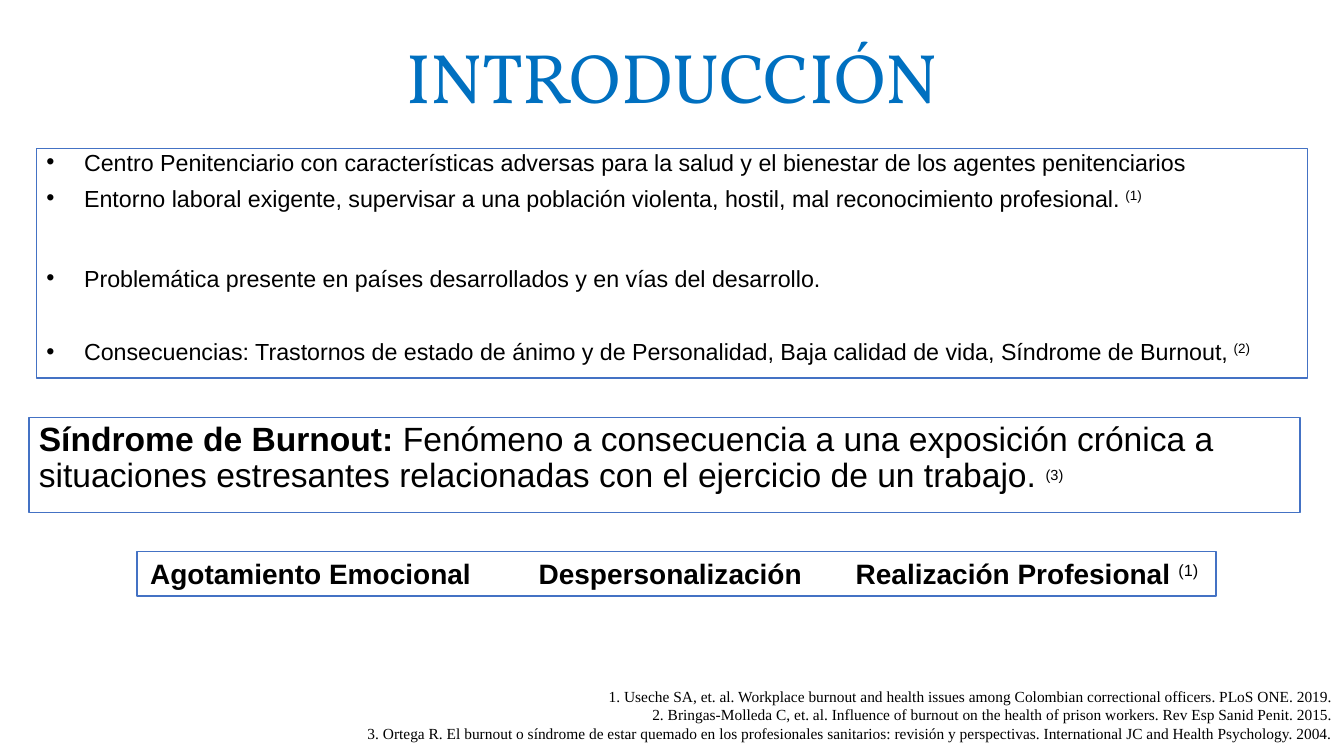
"""Builds the introduction slide on burnout among prison officers."""
from lxml.etree import SubElement
from pptx import Presentation
from pptx.dml.color import RGBColor
from pptx.enum.shapes import MSO_SHAPE as Preset
from pptx.enum.text import MSO_ANCHOR as Anchor, PP_ALIGN as Align
from pptx.oxml.ns import qn
from pptx.util import Pt

COLORS = {"title": "0070C0", "border": "4472C4", "paper": "FFFFFF", "ink": "000000"}


class SlideWriter:
    def __init__(self, slide):
        self.slide = slide

    def color(self, name):
        return RGBColor.from_string(COLORS[name])

    def text(self, at, anchor=Anchor.TOP):
        return self.prepare(self.slide.shapes.add_textbox(*map(Pt, at)), anchor)

    def panel(self, at):
        box = self.slide.shapes.add_shape(Preset.RECTANGLE, *map(Pt, at))
        box.shadow.inherit = False
        box.fill.solid()
        box.fill.fore_color.rgb = self.color("paper")
        box.line.color.rgb = self.color("border")
        box.line.width = Pt(1)
        return self.prepare(box, Anchor.TOP)

    def prepare(self, box, anchor):
        frame = box.text_frame
        frame.word_wrap = True
        frame.vertical_anchor = anchor
        return frame

    def paragraph(self, frame, first, align=Align.LEFT, spacing=1.0, before=0):
        line = frame.paragraphs[0] if first else frame.add_paragraph()
        line.alignment = align
        line.line_spacing = spacing
        line.space_before = Pt(before)
        return line

    def bullet(self, line, indent):
        props = line._p.get_or_add_pPr()
        props.set("marL", str(Pt(indent)))
        props.set("indent", str(-Pt(indent)))
        SubElement(props, qn("a:buFont"), typeface="Arial")
        SubElement(props, qn("a:buChar"), char="•")

    def tabs(self, line, stops):
        tab_list = SubElement(line._p.get_or_add_pPr(), qn("a:tabLst"))
        for stop in stops:
            SubElement(tab_list, qn("a:tab"), pos=str(Pt(stop)), algn="l")

    def run(self, line, words, size, font="Arial", color="ink", bold=False, raised=False):
        run = line.add_run()
        run.text = words
        run.font.size = Pt(size)
        run.font.name = font
        run.font.bold = bold
        run.font.color.rgb = self.color(color)
        if raised:
            run._r.get_or_add_rPr().set("baseline", "30000")


def main():
    deck = Presentation()
    deck.slide_width, deck.slide_height = Pt(960), Pt(540)
    writer = SlideWriter(deck.slides.add_slide(deck.slide_layouts[6]))

    heading = writer.text((156, 16, 648, 83), Anchor.MIDDLE)
    title = writer.paragraph(heading, True, Align.CENTER, 0.9)
    writer.run(title, "INTRODUCCIÓN", 50, "Vollkorn", "title")

    definition = writer.panel((20.7, 298.3, 908, 67.7))
    burnout = writer.paragraph(definition, True, spacing=0.9)
    writer.run(burnout, "Síndrome de Burnout:", 24, bold=True)
    writer.run(burnout, " Fenómeno a consecuencia a una exposición crónica a situaciones "
               "estresantes relacionadas con el ejercicio de un trabajo. ", 24)
    writer.run(burnout, "(3)", 18, raised=True)

    references = writer.text((150.5, 487, 808.5, 47.5))
    for number, citation in enumerate((
        "1. Useche SA, et. al. Workplace burnout and health issues among Colombian "
        "correctional officers. PLoS ONE. 2019.",
        "2. Bringas-Molleda C, et. al. Influence of burnout on the health of prison "
        "workers. Rev Esp Sanid Penit. 2015.",
        "3. Ortega R. El burnout o síndrome de estar quemado en los profesionales sanitarios: "
        "revisión y perspectivas. International JC and Health Psychology. 2004.",
    )):
        entry = writer.paragraph(references, number == 0, Align.RIGHT)
        writer.run(entry, citation, 11, "Times New Roman")

    context = writer.panel((26, 106, 908, 164))
    for number, (statement, source, before) in enumerate((
        ("Centro Penitenciario con características adversas para la salud y el bienestar "
         "de los agentes penitenciarios", "", 0),
        ("Entorno laboral exigente, supervisar a una población violenta, hostil, "
         "mal reconocimiento profesional. ", "(1)", 10),
        ("Problemática presente en países desarrollados y en vías del desarrollo.", "", 41),
        ("Consecuencias: Trastornos de estado de ánimo y de Personalidad, "
         "Baja calidad de vida, Síndrome de Burnout, ", "(2)", 36.5),
    )):
        point = writer.paragraph(context, number == 0, spacing=0.8, before=before)
        writer.bullet(point, 27)
        writer.run(point, statement, 16.6)
        if source:
            writer.run(point, source, 16.6, raised=True)

    dimensions = writer.panel((98, 394, 770.5, 31.7))
    dimensions.margin_left, dimensions.margin_right = Pt(9.2), Pt(0)
    row = writer.paragraph(dimensions, True)
    writer.tabs(row, (277.5, 504))
    writer.run(row, "Agotamiento Emocional\tDespersonalización\tRealización Profesional ",
               20, bold=True)
    writer.run(row, "(1)", 20, raised=True)

    deck.save("out.pptx")


if __name__ == "__main__":
    main()
